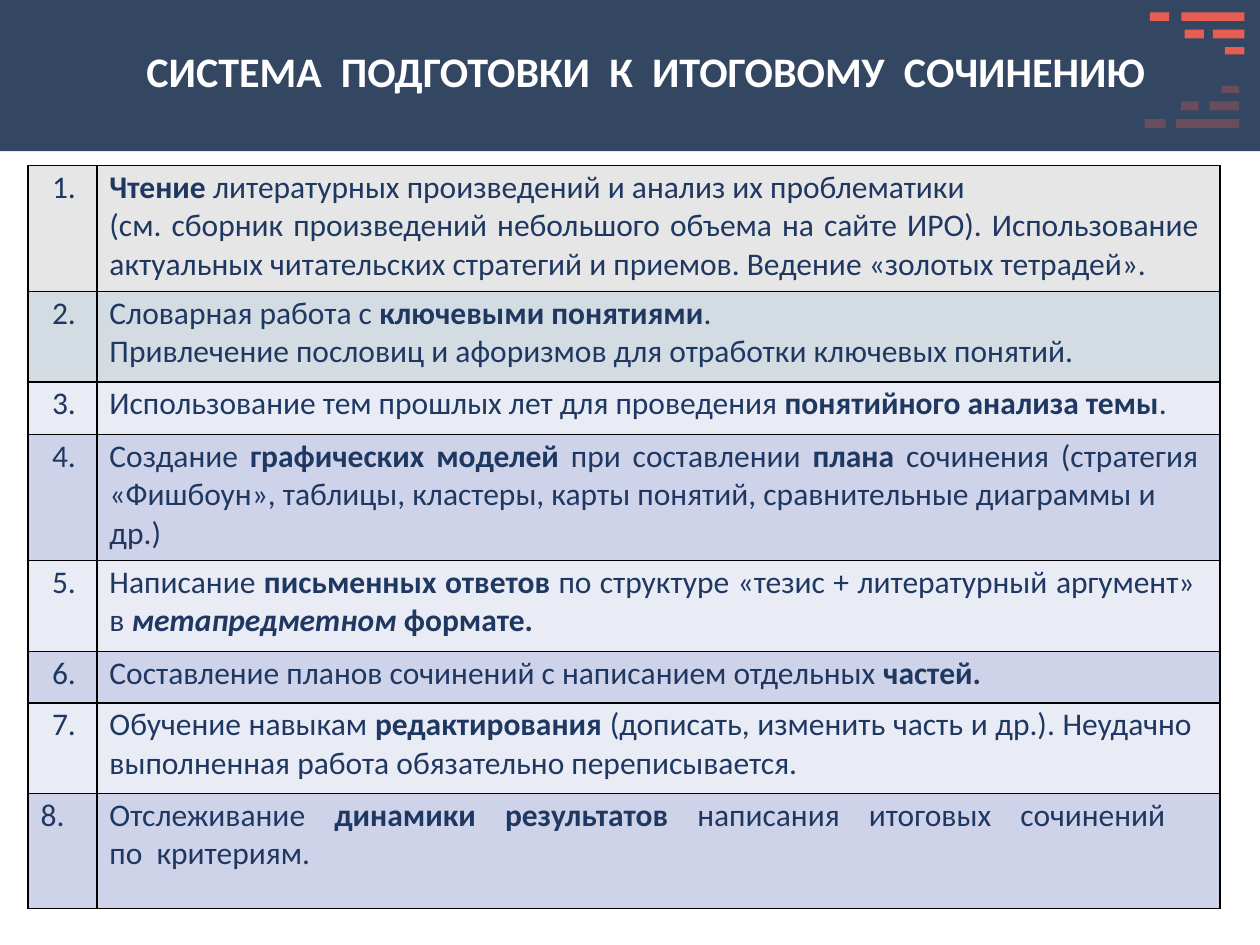
from itertools import groupby
from pptx import Presentation
from pptx.dml.color import RGBColor as RGB
from pptx.enum.shapes import MSO_SHAPE as SHAPE
from pptx.enum.text import PP_ALIGN as ALIGN
from pptx.oxml import parse_xml
from pptx.oxml.ns import nsdecls, qn
from pptx.oxml.xmlchemy import OxmlElement
from pptx.util import Pt

COLORS = {
    "navy": "344762", "coral": "E65E52", "white": "FFFFFF", "text": "1F3862",
    "black": "000000", "grey": "E7E6E6", "steel": "D4DCE3",
    "light": "E9EBF5", "lilac": "CFD3EA",
}


def write(p, text, size=18, color="text", align=ALIGN.LEFT, indent=0,
          before=0, gap=None):
    """Fill a paragraph; *...* is bold, _..._ italic, gap widens the spaces."""
    p.alignment = align
    p.space_before = Pt(before)
    pPr = p._p.get_or_add_pPr()
    pPr.set("marL", str(Pt(indent)))
    pPr.set("indent", "0")
    for i, part in enumerate(text.split("*")):
        for j, chunk in enumerate(part.split("_")):
            pieces = [chunk]
            if gap:
                pieces = ["".join(g) for _, g in groupby(chunk, str.isspace)]
            for piece in filter(None, pieces):
                r = p.add_run()
                r.text = piece
                r.font.name = "Calibri"
                r.font.size = Pt(size)
                r.font.bold = i % 2 == 1
                r.font.italic = j % 2 == 1
                r.font.color.rgb = RGB.from_string(COLORS[color])
                if gap and piece.isspace():
                    r._r.get_or_add_rPr().set("spc", str(round(gap * 100)))


def paint(sp, color):
    sp.fill.solid()
    sp.fill.fore_color.rgb = RGB.from_string(COLORS[color])
    sp.line.fill.background()
    sp.shadow.inherit = False


prs = Presentation()
prs.slide_width, prs.slide_height = Pt(720), Pt(540)
s = prs.slides.add_slide(prs.slide_layouts[6])

# Header band and title
paint(s.shapes.add_shape(SHAPE.RECTANGLE, 0, 0, Pt(720), Pt(86.4)), "navy")
tf = s.shapes.add_textbox(Pt(82.8), Pt(25.2), Pt(580), Pt(31)).text_frame
tf.word_wrap = True
tf.margin_left = tf.margin_right = tf.margin_bottom = 0
tf.margin_top = Pt(1)
write(tf.paragraphs[0], "*СИСТЕМА ПОДГОТОВКИ К ИТОГОВОМУ СОЧИНЕНИЮ*",
      size=24, color="white", indent=0.9, before=1, gap=5.5)

# Dashes in the corner, then their faded reflection
DASH_HEIGHT = 4.8
dashes = [(656.6, 7.2, 11.5), (674.6, 7.2, 36), (676.8, 16.8, 10.8),
          (693.4, 16.8, 17.3), (699.8, 26.6, 10.8)]
reflected = [(x - 2.2, 80 - y - DASH_HEIGHT, w) for x, y, w in dashes]
for bars, opacity in ((dashes, 100), (reflected, 30)):
    builder = None
    for x, y, w in bars:
        if builder is None:
            builder = s.shapes.build_freeform(x, y, scale=Pt(1))
        else:
            builder.move_to(x, y)
        builder.add_line_segments(
            [(x + w, y), (x + w, y + DASH_HEIGHT), (x, y + DASH_HEIGHT)])
    sp = builder.convert_to_shape()
    paint(sp, "coral")
    if opacity < 100:
        alpha = OxmlElement("a:alpha")
        alpha.set("val", str(opacity * 1000))
        sp._element.spPr.find(qn("a:solidFill"))[0].append(alpha)

# Steps: fill, row height, right margin, paragraphs with their own format
J = {"align": ALIGN.JUSTIFY}
steps = [
    ("grey", 72, 12, [
        ("*Чтение *литературных произведений и анализ их проблематики", {}),
        ("(см. сборник произведений небольшого объема на сайте ИРО). "
         "Использование актуальных читательских стратегий и приемов. "
         "Ведение «золотых тетрадей».", J)]),
    ("steel", 51.8, 12, [
        ("Словарная работа с *ключевыми понятиями*.", {}),
        ("Привлечение пословиц и афоризмов для отработки ключевых понятий.", {})]),
    ("light", 30, 12, [
        ("Использование тем прошлых лет для проведения "
         "*понятийного анализа темы*.", {})]),
    ("lilac", 72, 12, [
        ("Создание *графических моделей *при составлении *плана *сочинения "
         "(стратегия", {"gap": 2.7}),
        ("«Фишбоун», таблицы, кластеры, карты понятий, "
         "сравнительные диаграммы и др.)", {})]),
    ("light", 51.8, 12, [
        ("Написание *письменных ответов *по структуре «тезис + литературный "
         "аргумент»", {"gap": 0.7}),
        ("в *_метапредметном _формате.*", {})]),
    ("lilac", 29.6, 12, [
        ("Составление планов сочинений с написанием отдельных *частей.*", {})]),
    ("light", 51.8, 16, [
        ("Обучение навыкам *редактирования *(дописать, изменить часть и др.). "
         "Неудачно выполненная работа обязательно переписывается.", J)]),
    ("lilac", 65.6, 12, [
        ("Отслеживание *динамики результатов *написания итоговых сочинений",
         {"gap": 12.5}),
        ("по критериям.", {"gap": 4})]),
]
heights = [height for _, height, _, _ in steps]
table = s.shapes.add_table(len(steps), 2, Pt(16), Pt(94.6), Pt(681.2),
                           Pt(sum(heights))).table
table.first_row = table.horz_banding = False
table.columns[0].width, table.columns[1].width = Pt(39.4), Pt(641.8)

for n, (color, height, margin, paragraphs) in enumerate(steps):
    table.rows[n].height = Pt(height)
    last = n == len(steps) - 1
    number_format = {"indent": 7.2} if last else {"align": ALIGN.RIGHT}
    columns = ([(f"{n + 1}.", number_format)],
               [(text, {"indent": 7.2, **fmt}) for text, fmt in paragraphs])
    for col, content in enumerate(columns):
        cell = table.cell(n, col)
        cell.margin_left = cell.margin_bottom = 0
        cell.margin_top = Pt(1.6)
        cell.margin_right = Pt(margin if col else 12)
        cell.fill.solid()
        cell.fill.fore_color.rgb = RGB.from_string(COLORS[color])
        for k, (text, fmt) in enumerate(content):
            tf = cell.text_frame
            p = tf.add_paragraph() if k else tf.paragraphs[0]
            write(p, text, before=0 if k else 1.4, **fmt)
        tcPr = cell._tc.get_or_add_tcPr()
        for k, side in enumerate("LRTB"):
            tcPr.insert(k, parse_xml(
                f'<a:ln{side} {nsdecls("a")} w="{Pt(1)}"><a:solidFill>'
                f'<a:srgbClr val="{COLORS["black"]}"/></a:solidFill></a:ln{side}>'))

prs.save("out.pptx")
